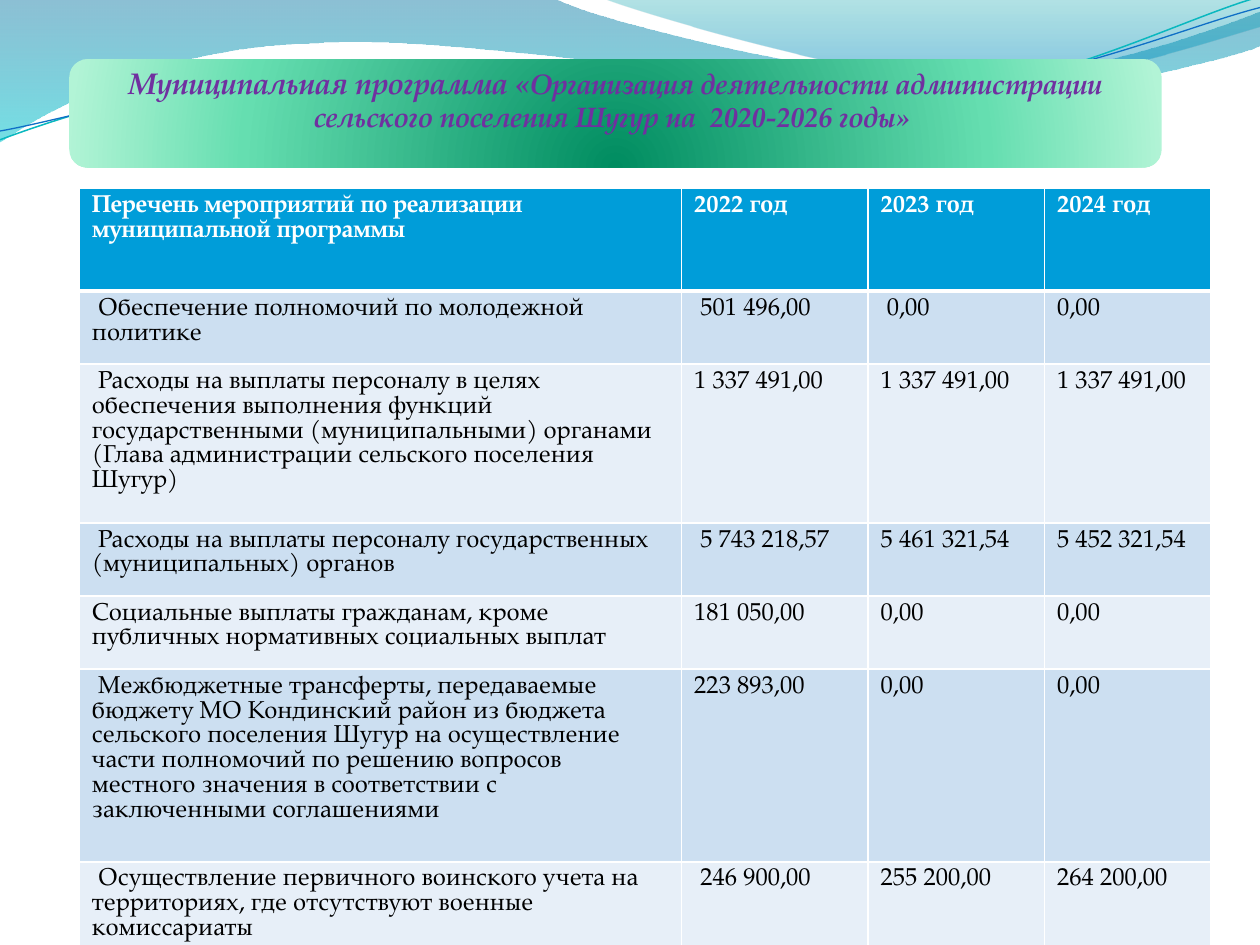
from dataclasses import dataclass

from lxml import etree
from pptx import Presentation
from pptx.dml.color import RGBColor
from pptx.enum.shapes import MSO_SHAPE
from pptx.enum.text import MSO_ANCHOR, MSO_AUTO_SIZE, PP_ALIGN
from pptx.oxml import parse_xml
from pptx.oxml.ns import nsdecls, qn
from pptx.util import Inches, Pt

ROUNDED = MSO_SHAPE.ROUNDED_RECTANGLE
TOP = MSO_ANCHOR.TOP
CENTER = PP_ALIGN.CENTER
NO_FIT = MSO_AUTO_SIZE.NONE
TITLE_ONLY = 5


@dataclass(frozen=True)
class Theme:
    font: str = "TeX Gyre Pagella"
    title: str = "7030A0"
    header: str = "009DD9"
    bands: tuple = ("CCDFF1", "E7EFF8")
    white: str = "FFFFFF"
    black: str = "000000"
    teal: str = "0AB8BF"
    blue: str = "0F6FC6"
    back_wave: tuple = ((0, "0074A1", 45), (100, "00C6CF", 55))
    front_wave: tuple = ((0, "00A1A9", 30), (80, "008BBF", 45))
    banner: tuple = ((0, "008C60", 100), (68, "65DEB0", 100), (100, "B2F4D6", 100))
    title_sizes: tuple = (17, 16)
    table_size: int = 14
    table_leading: float = 14.2


THEME = Theme()
DOWNWARD = '<a:lin ang="5400000" scaled="0"/>'
FROM_BELOW = ('<a:path path="circle"><a:fillToRect l="50000" t="130000" '
              'r="50000" b="-30000"/></a:path>')

BACK_WAVE = [
    (0, 0), (4.4, -0.01),
    (4.76, 0.17, 6.64, 0.63, 7.58, 0.63), (8.53, 0.63, 9.58, 0.26, 10, 0.09),
    (10.01, 0.36),
    (9.83, 0.44, 8.7, 0.76, 7.46, 0.75), (6.22, 0.75, 3.82, 0.28, 2.57, 0.34),
    (1.29, 0.36, 0.46, 0.83, -0.01, 1.13), (0, 0),
]
FRONT_WAVE = [
    (4.79, -0.01), (5.09, 0.11, 6.82, 0.62, 7.69, 0.65),
    (8.56, 0.69, 9.61, 0.32, 10, 0.21), (10, 0), (4.79, -0.01),
]
TEAL_LINE = [
    (0, 1.11), (0.48, 0.93, 1.58, 0.57, 2.77, 0.52),
    (3.95, 0.47, 5.93, 0.89, 7.13, 0.8), (8.33, 0.71, 9.38, 0.15, 9.98, -0.02),
]
BLUE_LINE = [
    (0, 1.04), (0.47, 0.96, 1.64, 0.61, 2.83, 0.56),
    (4.03, 0.51, 5.97, 0.84, 7.17, 0.75), (8.36, 0.67, 9.41, 0.21, 10, 0.06),
]

TITLE_PARTS = (
    "Муниципальная программа «",
    "Организация деятельности администрации сельского поселения Шугур на  2020-2026 годы» ",
)
COLUMN_WIDTHS = (4.78, 1.48, 1.4, 1.32)
ROW_HEIGHTS = (0.82, 0.58, 1.26, 0.58, 0.58, 1.53, 0.69)
ROWS = (
    ("Перечень мероприятий по реализации муниципальной программы",
     "2022 год", "2023 год", "2024 год"),
    (" Обеспечение полномочий по молодежной политике", " 501 496,00", " 0,00", "0,00"),
    (" Расходы на выплаты персоналу в целях обеспечения выполнения функций "
     "государственными (муниципальными) органами  (Глава администрации сельского "
     "поселения Шугур)", "1 337 491,00", "1 337 491,00", "1 337 491,00"),
    (" Расходы на выплаты персоналу государственных (муниципальных) органов",
     " 5 743 218,57", "5 461 321,54", "5 452 321,54"),
    ("Социальные выплаты гражданам, кроме публичных нормативных социальных выплат",
     "181 050,00", "0,00", "0,00"),
    (" Межбюджетные трансферты, передаваемые бюджету МО Кондинский район из бюджета "
     "сельского поселения Шугур на осуществление части полномочий по решению вопросов "
     "местного значения в соответствии с заключенными соглашениями",
     "223 893,00", "0,00", "0,00"),
    (" Осуществление первичного воинского учета на территориях, где отсутствуют "
     "военные комиссариаты", " 246 900,00", "255 200,00", "264 200,00"),
)


def color(code):
    return RGBColor.from_string(code)


def bend(shape, segments):
    lines = list(shape._element.iter(qn("a:lnTo")))
    for line, segment in zip(lines, segments):
        if len(segment) == 2:
            continue
        line.clear()
        line.tag = qn("a:cubicBezTo")
        for x, y in zip(segment[::2], segment[1::2]):
            point = etree.SubElement(line, qn("a:pt"))
            point.set("x", str(Inches(x) - shape.left))
            point.set("y", str(Inches(y) - shape.top))


def add_outline(page, segments, closed):
    start, *points = [(Inches(x), Inches(y)) for *_, x, y in segments]
    builder = page.shapes.build_freeform(*start)
    builder.add_line_segments(points, close=closed)
    shape = builder.convert_to_shape()
    bend(shape, segments[1:])
    shape.shadow.inherit = False
    shape.fill.background()
    return shape


def fill_gradient(shape, stops, direction):
    stop_xml = "".join(
        f'<a:gs pos="{position * 1000}"><a:srgbClr val="{code}">'
        f'<a:alpha val="{opacity * 1000}"/></a:srgbClr></a:gs>'
        for position, code, opacity in stops)
    gradient = parse_xml(f'<a:gradFill {nsdecls("a")} rotWithShape="1">'
                         f'<a:gsLst>{stop_xml}</a:gsLst>{direction}</a:gradFill>')
    shape.fill.background()
    properties = shape._element.spPr
    properties.replace(properties.find(qn("a:noFill")), gradient)


def add_wave(page, segments, stops):
    wave = add_outline(page, segments, True)
    wave.line.fill.background()
    fill_gradient(wave, stops, DOWNWARD)


def add_curve(page, segments, code, width):
    curve = add_outline(page, segments, False)
    curve.line.color.rgb = color(code)
    curve.line.width = Pt(width)


def add_banner(page, place):
    banner = page.shapes.add_shape(ROUNDED, *place)
    banner.shadow.inherit = False
    banner.line.fill.background()
    fill_gradient(banner, THEME.banner, FROM_BELOW)


def set_title(page, place):
    title = page.shapes.title
    title.left, title.top, title.width, title.height = place
    frame = title.text_frame
    frame.word_wrap = True
    frame.auto_size = NO_FIT
    frame.vertical_anchor = TOP
    frame.margin_top = Inches(0.04)
    para = frame.paragraphs[0]
    para.alignment = CENTER
    para.font.name = THEME.font
    para.font.bold = para.font.italic = True
    para.font.color.rgb = color(THEME.title)
    for text, size in zip(TITLE_PARTS, THEME.title_sizes):
        span = para.add_run()
        span.text = text
        span.font.size = Pt(size)
    page.shapes._spTree.append(title._element)


def set_borders(cell, bottom):
    properties = cell._tc.get_or_add_tcPr()
    sides = (("lnL", 1), ("lnR", 1), ("lnT", 1), ("lnB", bottom))
    for index, (side, width) in enumerate(sides):
        properties.insert(index, parse_xml(
            f'<a:{side} {nsdecls("a")} w="{Pt(width)}"><a:solidFill>'
            f'<a:srgbClr val="{THEME.white}"/></a:solidFill></a:{side}>'))


def set_cell(cell, text, is_header, background):
    cell.text = text
    cell.fill.solid()
    cell.fill.fore_color.rgb = color(background)
    set_borders(cell, 3 if is_header else 1)
    para = cell.text_frame.paragraphs[0]
    para.line_spacing = Pt(THEME.table_leading)
    para.font.name = THEME.font
    para.font.size = Pt(THEME.table_size)
    para.font.bold = is_header
    para.font.color.rgb = color(THEME.white if is_header else THEME.black)


def add_budget_table(page, left, top):
    table = page.shapes.add_table(
        len(ROWS), len(COLUMN_WIDTHS), left, top,
        Inches(sum(COLUMN_WIDTHS)), Inches(sum(ROW_HEIGHTS))).table
    for column, width in zip(table.columns, COLUMN_WIDTHS):
        column.width = Inches(width)
    for number, (row, height, texts) in enumerate(zip(table.rows, ROW_HEIGHTS, ROWS)):
        row.height = Inches(height)
        background = THEME.bands[(number - 1) % 2] if number else THEME.header
        for cell, text in zip(row.cells, texts):
            set_cell(cell, text, number == 0, background)


def main():
    deck = Presentation()
    deck.slide_width, deck.slide_height = Inches(10), Inches(7.5)
    page = deck.slides.add_slide(deck.slide_layouts[TITLE_ONLY])
    add_wave(page, BACK_WAVE, THEME.back_wave)
    add_wave(page, FRONT_WAVE, THEME.front_wave)
    add_curve(page, TEAL_LINE, THEME.teal, 0.85)
    add_curve(page, BLUE_LINE, THEME.blue, 0.75)
    place = [Inches(value) for value in (0.55, 0.47, 8.67, 0.86)]
    add_banner(page, place)
    set_title(page, place)
    add_budget_table(page, Inches(0.63), Inches(1.49))
    deck.save("out.pptx")


if __name__ == "__main__":
    main()
